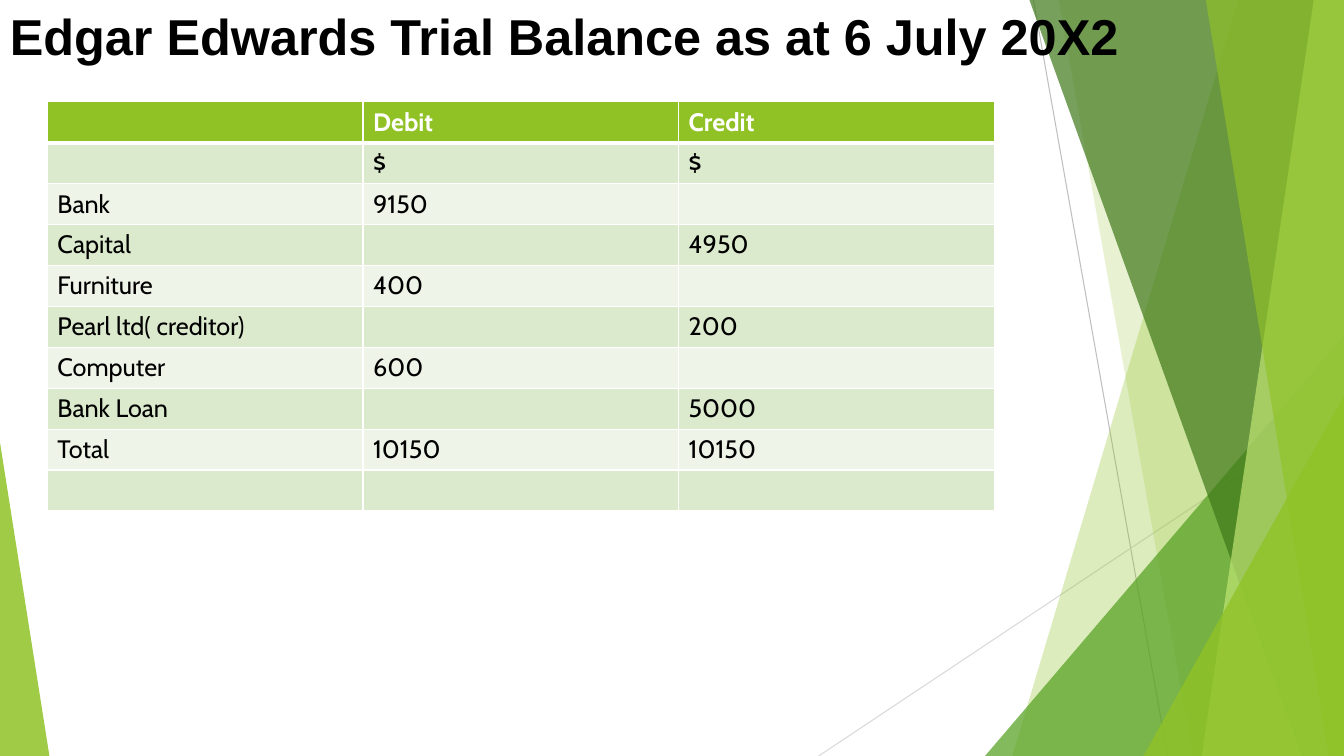
from lxml.etree import SubElement
from pptx import Presentation
from pptx.dml.color import RGBColor
from pptx.enum.shapes import MSO_CONNECTOR as Connector, MSO_SHAPE as Shape
from pptx.enum.text import MSO_ANCHOR as Anchor
from pptx.oxml import parse_xml
from pptx.oxml.ns import nsdecls, qn
from pptx.util import Pt

EMU_PER_PX = 9144  # 100 px to the inch
WIDTH, HEIGHT = 1333, 750
LIME, GREEN, FOREST, PALE = "90C226", "54A021", "3F7819", "C0E474"
WHITE, BLACK = "FFFFFF", "000000"
BANDS = ["DBE9CD", "EEF4E8"]

BALANCES = [
    ["", "Debit", "Credit"],
    ["", "$", "$"],
    ["Bank", "9150", ""],
    ["Capital", "", "4950"],
    ["Furniture", "400", ""],
    ["Pearl ltd( creditor)", "", "200"],
    ["Computer", "600", ""],
    ["Bank Loan", "", "5000"],
    ["Total", "10150", "10150"],
    ["", "", ""],
]


def px(length):
    return round(length * EMU_PER_PX)


def color(value):
    return RGBColor.from_string(value)


def style_text(text_frame, font_name, size, text_color, bold):
    for paragraph in text_frame.paragraphs:
        for run in paragraph.runs:
            run.font.name = font_name
            run.font.size = Pt(size)
            run.font.bold = bold
            run.font.color.rgb = color(text_color)


def paint(shape, fill_color, opacity):
    """Fill a shape with a see-through colour, without line or shadow."""
    shape.shadow.inherit = False
    shape.fill.solid()
    shape.fill.fore_color.rgb = color(fill_color)
    shape.line.fill.background()
    srgb = shape.fill._xPr.find(qn("a:solidFill")).find(qn("a:srgbClr"))
    SubElement(srgb, qn("a:alpha")).set("val", str(opacity * 1000))


def add_thin_line(slide, start, end, line_color):
    line = slide.shapes.add_connector(Connector.STRAIGHT, *map(px, start + end))
    line.line.color.rgb = color(line_color)
    line.line.width = Pt(0.75)
    SubElement(line._element.spPr, qn("a:effectLst"))


def add_ribbon(slide, top_x, bottom_x, fill_color, opacity):
    """Draw a full-height band from a slanted left edge to the slide's right edge."""
    builder = slide.shapes.build_freeform(top_x, 0, scale=EMU_PER_PX)
    builder.add_line_segments([(WIDTH, 0), (WIDTH, HEIGHT), (bottom_x, HEIGHT)])
    paint(builder.convert_to_shape(), fill_color, opacity)


def add_corner(slide, left, top, width, apex, fill_color, opacity):
    """Draw a triangle standing on the bottom edge; apex runs from 0 (left) to 1."""
    box = map(px, (left, top, width, HEIGHT - top))
    triangle = slide.shapes.add_shape(Shape.ISOSCELES_TRIANGLE, *box)
    triangle.adjustments[0] = apex
    paint(triangle, fill_color, opacity)


def add_facets(slide):
    add_thin_line(slide, (1025, 0), (1158, HEIGHT), "BFBFBF")
    add_thin_line(slide, (WIDTH, 403), (812, HEIGHT), "D9D9D9")
    add_ribbon(slide, 1228, 1004, LIME, 30)
    add_ribbon(slide, 1050, 1183, LIME, 20)
    add_corner(slide, 977, 333, 356, 1, GREEN, 72)
    add_ribbon(slide, 1021, 1291, FOREST, 70)
    add_ribbon(slide, 1303, 1192, PALE, 70)
    add_ribbon(slide, 1196, 1318, LIME, 65)
    add_corner(slide, 1134, 393, 199, 1, LIME, 80)
    add_corner(slide, 0, 439, 49, 0, LIME, 85)


def add_title(slide, left, top, width, height):
    title = slide.shapes.add_textbox(*map(px, (left, top, width, height)))
    text_frame = title.text_frame
    text_frame.word_wrap = True
    text_frame.vertical_anchor = Anchor.TOP
    text_frame.text = "Edgar Edwards Trial Balance as at 6 July 20X2"
    style_text(text_frame, "Arial", 36, BLACK, True)


def add_borders(cell, bottom_width):
    properties = cell._tc.get_or_add_tcPr()
    widths = {"lnL": 1, "lnR": 1, "lnT": 1, "lnB": bottom_width}
    for position, (side, width) in enumerate(widths.items()):
        properties.insert(position, parse_xml(
            f'<a:{side} {nsdecls("a")} w="{Pt(width)}"><a:solidFill>'
            f'<a:srgbClr val="{WHITE}"/></a:solidFill></a:{side}>'))


def add_balance_table(slide, left, top, width, height):
    box = map(px, (left, top, width, height))
    table = slide.shapes.add_table(len(BALANCES), len(BALANCES[0]), *box).table
    for row, values in enumerate(BALANCES):
        is_header = row == 0
        for column, value in enumerate(values):
            cell = table.cell(row, column)
            cell.fill.solid()
            cell.fill.fore_color.rgb = color(LIME if is_header else BANDS[(row - 1) % 2])
            add_borders(cell, 3 if is_header else 1)
            if value:
                cell.text_frame.text = value
                style_text(cell.text_frame, "Cabin", 18,
                           WHITE if is_header else BLACK, is_header)


def main():
    presentation = Presentation()
    presentation.slide_width = px(WIDTH)
    presentation.slide_height = px(HEIGHT)
    slide = presentation.slides.add_slide(presentation.slide_layouts[6])
    add_facets(slide)
    add_title(slide, 0, 0, WIDTH, 116)
    add_balance_table(slide, 47, 101, 939, 406)
    presentation.save("out.pptx")


if __name__ == "__main__":
    main()
